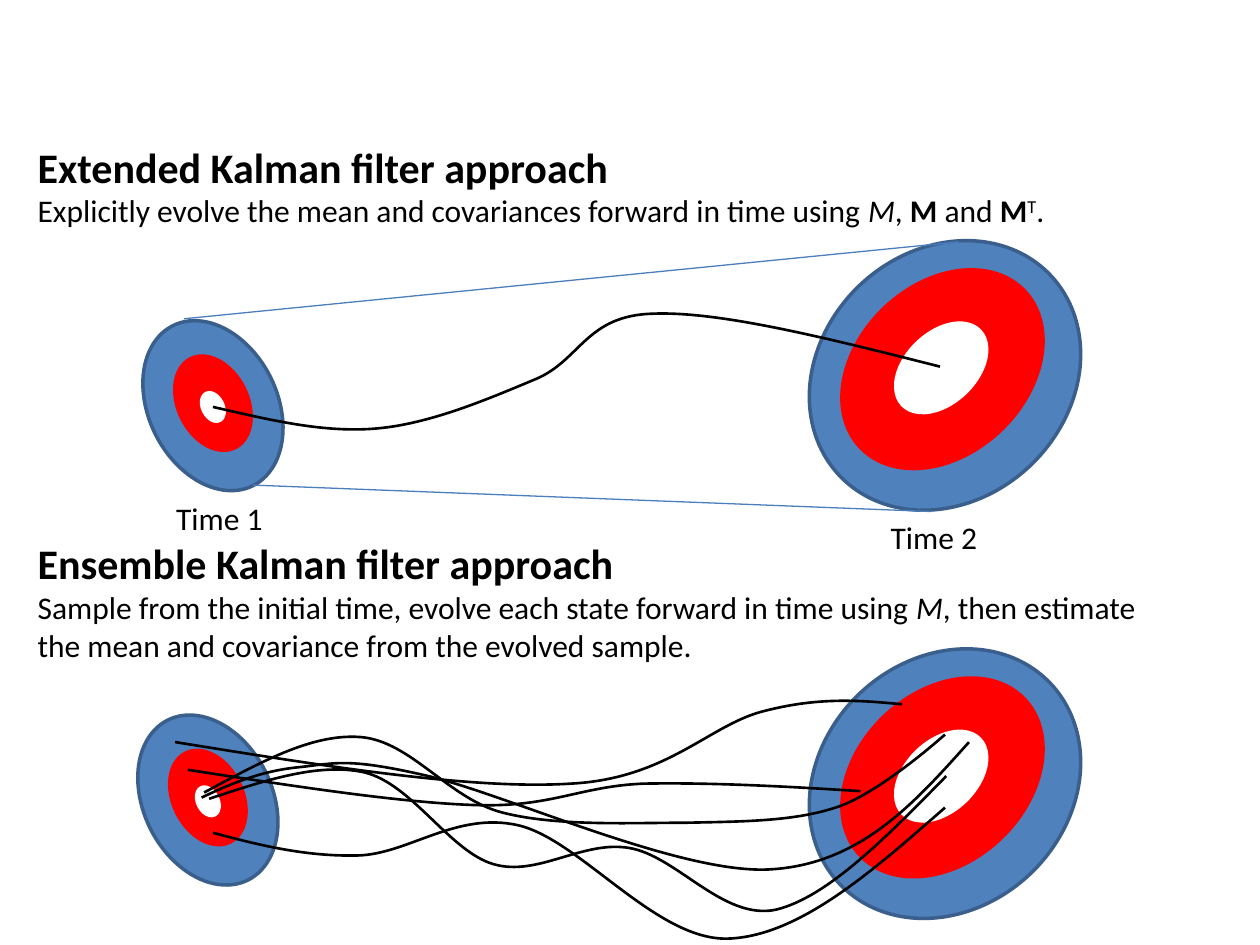
from lxml.etree import SubElement
from pptx import Presentation
from pptx.dml.color import RGBColor
from pptx.enum.shapes import MSO_CONNECTOR, MSO_SHAPE
from pptx.enum.text import MSO_AUTO_SIZE
from pptx.oxml.ns import qn
from pptx.util import Inches, Pt

BLUE = RGBColor(0x4F, 0x81, 0xBD)
BLUE_EDGE = RGBColor(0x3A, 0x5F, 0x8C)
BLUE_LINE = RGBColor(0x4B, 0x7E, 0xBC)
RED = RGBColor(0xFF, 0x00, 0x00)
WHITE = RGBColor(0xFF, 0xFF, 0xFF)
BLACK = RGBColor(0x00, 0x00, 0x00)
FONT = "Calibri"

# Text: (left, top, width, height), wrap, paragraphs of (size, runs of (text, style))
TEXTS = [
    ((0.2, 1.07, 8.28, 0.81), False, [
        (24, [("Extended Kalman filter approach", "bold")]),
        (18, [("Explicitly evolve the mean and covariances forward in time using ", ""),
              ("M", "italic"), (", ", ""), ("M", "bold"), (" and ", ""),
              ("M", "bold"), ("T", "superscript"), (".", "")]),
    ]),
    ((0.2, 4.22, 9.29, 1.11), True, [
        (24, [("Ensemble Kalman filter approach", "bold")]),
        (18, [("Sample from the initial time, evolve each state forward in time using ", ""),
              ("M", "italic"),
              (", then estimate the mean and covariance from the evolved sample.", "")]),
    ]),
    ((1.3, 3.91, 0.9, 0.4), False, [(18, [("Time 1", "")])]),
    ((6.97, 4.06, 0.9, 0.4), False, [(18, [("Time 2", "")])]),
]

# Targets: rotation and rings from outside in, (dx, dy, width, height) about the centre
RING_COLOURS = [(BLUE, BLUE_EDGE), (RED, RED), (WHITE, WHITE)]
INITIAL = (333.3, [(0, 0, 1.02, 1.42), (0, -0.02, 0.55, 0.79), (0, 0.01, 0.16, 0.24)])
EVOLVED = (46.2, [(0, 0, 1.97, 2.31), (-0.02, -0.05, 1.34, 1.8), (-0.03, -0.06, 0.55, 0.85)])
TARGETS = [
    ((1.69, 3.22), INITIAL), ((7.5, 2.98), EVOLVED),
    ((7.5, 6.22), EVOLVED), ((1.65, 6.35), INITIAL),
]

# Trajectories: a start point, then two control points and an end point per curve
MEAN_PATH = [
    (1.69, 3.23), (2.13, 3.33), (2.57, 3.44), (3, 3.4), (3.43, 3.36), (3.89, 3.16),
    (4.25, 3.01), (4.61, 2.86), (4.65, 2.5), (5.19, 2.49), (5.72, 2.47), (6.59, 2.69),
    (7.46, 2.91),
]
ENSEMBLE_PATHS = [
    [(1.66, 6.34), (2.09, 6.2), (2.52, 6.05), (2.89, 6.13), (3.27, 6.22), (3.57, 6.76),
     (3.92, 6.86), (4.27, 6.96), (4.62, 6.67), (4.99, 6.73), (5.37, 6.79), (5.74, 7.31),
     (6.16, 7.22), (6.57, 7.12), (7.04, 6.64), (7.51, 6.16)],
    [(1.62, 6.29), (2.05, 6.06), (2.47, 5.82), (2.86, 5.85), (3.26, 5.88), (3.56, 6.34),
     (3.99, 6.45), (4.42, 6.56), (5, 6.53), (5.45, 6.53), (5.9, 6.52), (6.32, 6.52),
     (6.66, 6.4), (7, 6.28), (7.5, 5.83), (7.5, 5.83)],
    [(1.6, 6.33), (1.83, 6.22), (2.07, 6.12), (2.36, 6.09), (2.66, 6.06), (2.74, 6.01),
     (3.36, 6.15), (3.99, 6.29), (5.39, 6.94), (6.11, 6.9), (6.83, 6.86), (7.26, 6.37),
     (7.69, 5.89)],
    [(1.49, 6.11), (2.33, 6.24), (3.17, 6.37), (3.77, 6.39), (4.38, 6.41), (4.6, 6.24),
     (5.11, 6.22), (5.62, 6.21), (6.22, 6.24), (6.83, 6.28)],
    [(1.69, 6.61), (2.06, 6.71), (2.43, 6.8), (2.84, 6.79), (3.24, 6.78), (3.62, 6.44),
     (4.11, 6.55), (4.6, 6.66), (5.21, 7.47), (5.78, 7.45), (6.34, 7.43), (6.92, 6.92),
     (7.5, 6.41)],
    [(1.39, 5.89), (2.57, 6.08), (3.74, 6.27), (4.53, 6.22), (5.31, 6.18), (5.64, 5.74),
     (6.08, 5.64), (6.51, 5.53), (6.84, 5.56), (7.16, 5.59)],
]
ENVELOPE = [((1.46, 2.53), (7.61, 1.92)), ((2.01, 3.85), (7.39, 4.06))]


def add_text(slide, box, wrap, paragraphs):
    frame = slide.shapes.add_textbox(*map(Inches, box)).text_frame
    frame.word_wrap = wrap
    frame.auto_size = MSO_AUTO_SIZE.SHAPE_TO_FIT_TEXT
    for index, (size, runs) in enumerate(paragraphs):
        paragraph = frame.add_paragraph() if index else frame.paragraphs[0]
        for words, style in runs:
            run = paragraph.add_run()
            run.text = words
            run.font.name, run.font.size = FONT, Pt(size)
            run.font.color.rgb = BLACK
            run.font.bold = style == "bold"
            run.font.italic = style == "italic"
            if style == "superscript":
                run._r.get_or_add_rPr().set("baseline", "30000")


def add_target(slide, centre, target):
    rotation, rings = target
    group = slide.shapes.add_group_shape()
    for (dx, dy, width, height), (fill, edge) in zip(rings, RING_COLOURS):
        left = centre[0] + dx - width / 2
        top = centre[1] + dy - height / 2
        ring = group.shapes.add_shape(
            MSO_SHAPE.OVAL, *map(Inches, (left, top, width, height)))
        ring.rotation = rotation
        ring.shadow.inherit = False
        ring.fill.solid()
        ring.fill.fore_color.rgb = fill
        ring.line.color.rgb = edge
        ring.line.width = Pt(2)


def add_trajectory(slide, points):
    """Draw a freeform through the points, each three forming one Bezier curve."""
    start, *rest = [(Inches(x), Inches(y)) for x, y in points]
    builder = slide.shapes.build_freeform(*start)
    builder.add_line_segments(rest, close=False)
    trajectory = builder.convert_to_shape()
    trajectory.shadow.inherit = False
    trajectory.fill.background()
    trajectory.line.color.rgb = BLACK
    trajectory.line.width = Pt(1.5)

    outline = next(trajectory._element.iter(qn("a:path")))
    segments = outline.findall(qn("a:lnTo"))
    for first in range(0, len(segments), 3):
        curve = SubElement(outline, qn("a:cubicBezTo"))
        for segment in segments[first:first + 3]:
            curve.append(segment[0])
            outline.remove(segment)


def add_envelope_line(slide, start, end):
    line = slide.shapes.add_connector(
        MSO_CONNECTOR.STRAIGHT, *map(Inches, (*start, *end)))
    line.line.color.rgb = BLUE_LINE
    line.line.width = Pt(0.75)
    SubElement(line._element.spPr, qn("a:effectLst"))


def main():
    prs = Presentation()
    prs.slide_width, prs.slide_height = Inches(10), Inches(7.5)
    slide = prs.slides.add_slide(prs.slide_layouts[6])
    for centre, target in TARGETS:
        add_target(slide, centre, target)
    for points in [*ENSEMBLE_PATHS, MEAN_PATH]:
        add_trajectory(slide, points)
    for start, end in ENVELOPE:
        add_envelope_line(slide, start, end)
    for box, wrap, paragraphs in TEXTS:
        add_text(slide, box, wrap, paragraphs)
    prs.save("out.pptx")


if __name__ == "__main__":
    main()
